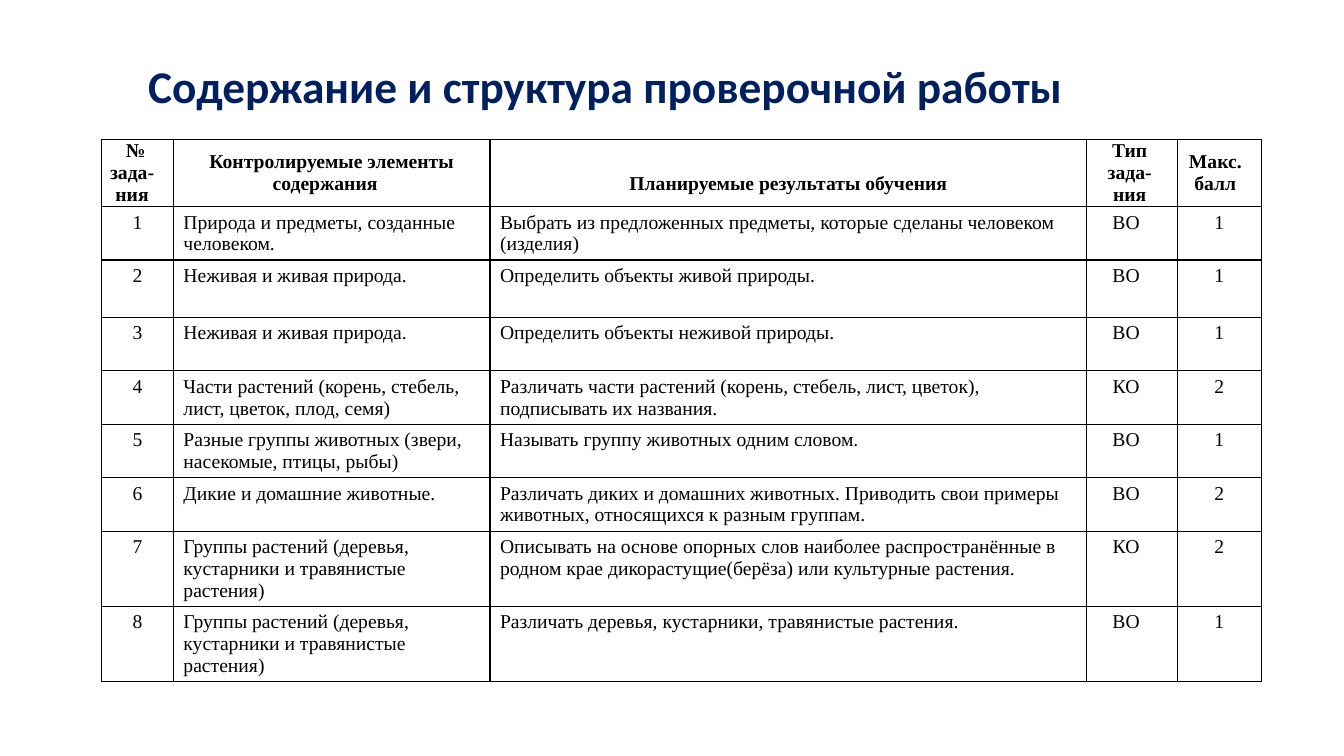
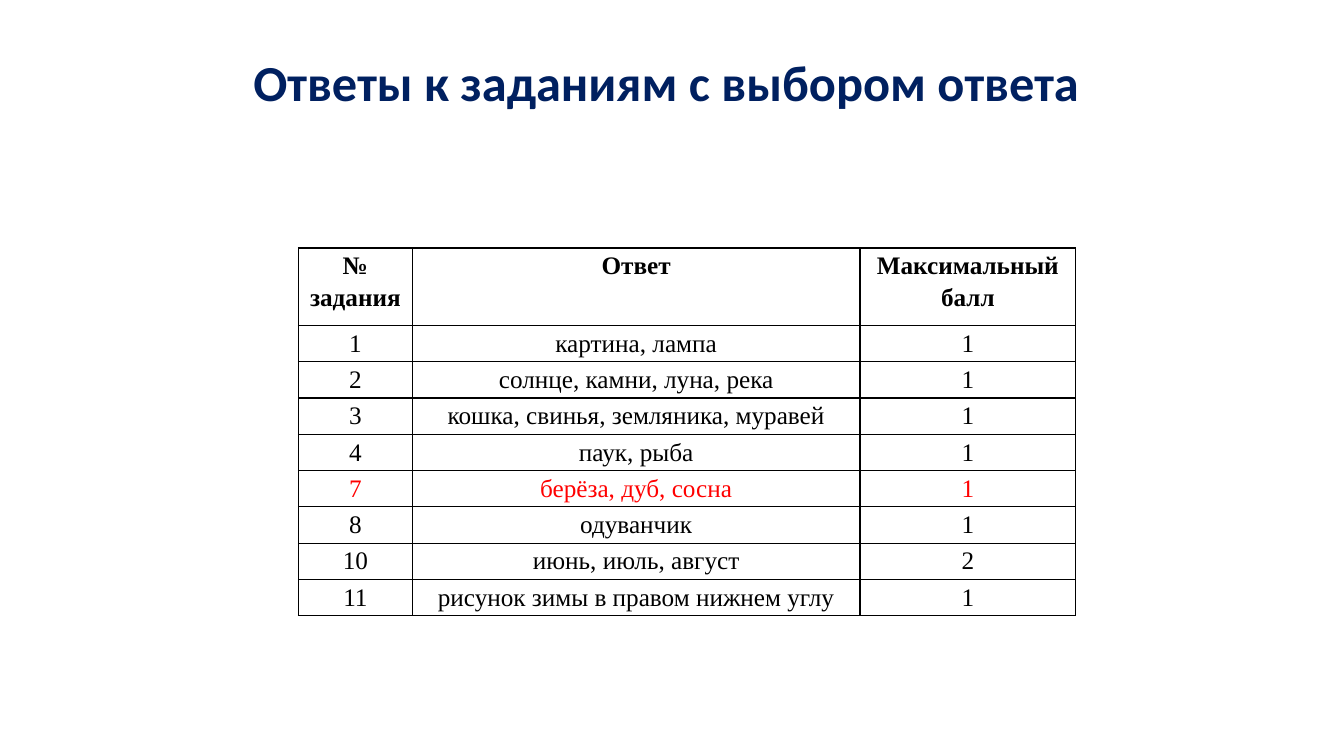
from lxml import etree
from pptx import Presentation
from pptx.dml.color import RGBColor
from pptx.enum import text
from pptx.oxml import ns
from pptx.util import Inches, Pt

NAVY = RGBColor(0x00, 0x20, 0x60)
BLACK = RGBColor(0x00, 0x00, 0x00)
RED = RGBColor(0xFF, 0x00, 0x00)
TITLE_FONT = "Calibri"
TABLE_FONT = "Times New Roman"
TITLE_ONLY = 5
LEFT, CENTER = text.PP_ALIGN.LEFT, text.PP_ALIGN.CENTER
TOP, MIDDLE = text.MSO_ANCHOR.TOP, text.MSO_ANCHOR.MIDDLE

STRUCTURE_HEADER = [
    "№ зада-ния", "Контролируемые элементы содержания",
    "Планируемые результаты обучения", "Тип зада-ния", "Макс. балл",
]
STRUCTURE_ROWS = [
    ("1", "Природа и предметы, созданные человеком.",
     "Выбрать из предложенных предметы, которые сделаны человеком (изделия)", "ВО", "1"),
    ("2", "Неживая и живая природа.", "Определить объекты живой природы.", "ВО", "1"),
    ("3", "Неживая и живая природа.", "Определить объекты неживой природы.", "ВО", "1"),
    ("4", "Части растений (корень, стебель, лист, цветок, плод, семя)",
     "Различать части растений (корень, стебель, лист, цветок), подписывать их названия.",
     "КО", "2"),
    ("5", "Разные группы животных (звери, насекомые, птицы, рыбы)",
     "Называть группу животных одним словом.", "ВО", "1"),
    ("6", "Дикие и домашние животные.",
     "Различать диких и домашних животных. Приводить свои примеры животных, "
     "относящихся к разным группам.", "ВО", "2"),
    ("7", "Группы растений (деревья, кустарники и травянистые растения)",
     "Описывать на основе опорных слов наиболее распространённые в родном крае "
     "дикорастущие(берёза) или культурные растения.", "КО", "2"),
    ("8", "Группы растений (деревья, кустарники и травянистые растения)",
     "Различать деревья, кустарники, травянистые растения.", "ВО", "1"),
]
ANSWER_HEADER = ["№ задания", "Ответ", "Максимальный балл"]
ANSWER_ROWS = [
    ("1", "картина, лампа", "1"),
    ("2", "солнце, камни, луна, река", "1"),
    ("3", "кошка, свинья, земляника, муравей", "1"),
    ("4", "паук, рыба", "1"),
    ("7", "берёза, дуб, сосна", "1"),
    ("8", "одуванчик", "1"),
    ("10", "июнь, июль, август", "2"),
    ("11", "рисунок зимы в правом нижнем углу", "1"),
]
HIGHLIGHTED_TASK = "7"


def add_titled_slide(presentation, title_text, size, left, width, height):
    slide = presentation.slides.add_slide(presentation.slide_layouts[TITLE_ONLY])
    title = slide.shapes.title
    title.left, title.top = Inches(left), Inches(0.4)
    title.width, title.height = Inches(width), Inches(height)
    frame = title.text_frame
    frame.text = title_text
    frame.auto_size = text.MSO_AUTO_SIZE.NONE
    frame.vertical_anchor = MIDDLE
    paragraph = frame.paragraphs[0]
    paragraph.alignment = CENTER
    paragraph.line_spacing = 0.9
    set_font(paragraph, TITLE_FONT, size, NAVY, True)
    return slide


def set_font(paragraph, name, size, color, bold=False):
    font = paragraph.font
    font.name, font.size, font.bold = name, Pt(size), bold
    font.color.rgb = color


def set_borders(cell):
    properties = cell._tc.get_or_add_tcPr()
    for side in ("lnL", "lnR", "lnT", "lnB"):
        line = etree.SubElement(properties, ns.qn(f"a:{side}"), w=str(Pt(1)))
        fill = etree.SubElement(line, ns.qn("a:solidFill"))
        etree.SubElement(fill, ns.qn("a:srgbClr"), val=str(BLACK))


def set_indents(paragraph, left=0, right=0, first=0):
    properties = paragraph._p.get_or_add_pPr()
    for name, value in (("marL", left), ("marR", right), ("indent", first)):
        properties.set(name, str(Inches(value)))


def set_margins(cell, left, top, right, bottom):
    cell.margin_left, cell.margin_top = Inches(left), Inches(top)
    cell.margin_right, cell.margin_bottom = Inches(right), Inches(bottom)


def add_grid(slide, left, top, widths, heights, rows, size):
    """Add a plain bordered table with a bold first row and centred text."""
    frame = slide.shapes.add_table(
        len(rows), len(widths), Inches(left), Inches(top),
        Inches(sum(widths)), Inches(sum(heights)))
    table = frame.table
    table.first_row = table.horz_banding = False
    for column, width in zip(table.columns, widths):
        column.width = Inches(width)
    for row_index, (row, height, values) in enumerate(zip(table.rows, heights, rows)):
        row.height = Inches(height)
        for cell, value in zip(row.cells, values):
            set_borders(cell)
            cell.fill.background()
            cell.vertical_anchor = TOP
            cell.text = value
            paragraph = cell.text_frame.paragraphs[0]
            paragraph.alignment = CENTER
            set_font(paragraph, TABLE_FONT, size, BLACK, row_index == 0)
    return table


def add_structure_slide(presentation):
    slide = add_titled_slide(
        presentation, "Содержание и структура проверочной работы", 32.4, 0.92, 10.17, 0.96)
    heights = [0.67, 0.53, 0.57, 0.53, 0.53, 0.53, 0.53, 0.74, 0.74]
    table = add_grid(slide, 1.01, 1.38, [0.71, 3.14, 5.92, 0.9, 0.83], heights,
                     [STRUCTURE_HEADER, *STRUCTURE_ROWS], 14)
    header_indents = [(0, 0.11, 0.07), (0, 0.13, 0.13), (0, 0, 0), (0.15, 0.2, 0), (0, 0.08, 0)]
    for column, indents in enumerate(header_indents):
        cell = table.cell(0, column)
        set_margins(cell, 0.01, 0.01, 0.01, 0.01)
        cell.vertical_anchor = MIDDLE
        set_indents(cell.text_frame.paragraphs[0], *indents)
    table.cell(0, 2).margin_top = Inches(0.23)
    for row in range(1, len(heights)):
        for column in (1, 2):
            table.cell(row, column).text_frame.paragraphs[0].alignment = LEFT
        set_indents(table.cell(row, 3).text_frame.paragraphs[0], right=0.12)


def add_answers_slide(presentation):
    slide = add_titled_slide(
        presentation, "Ответы к заданиям с выбором ответа", 36, 0.86, 11.5, 0.9)
    heights = [0.77] + [0.36] * len(ANSWER_ROWS)
    table = add_grid(slide, 2.96, 2.46, [1.13, 4.44, 2.14], heights,
                     [ANSWER_HEADER, *ANSWER_ROWS], 18)
    for row in table.rows:
        highlighted = row.cells[0].text == HIGHLIGHTED_TASK
        for cell in row.cells:
            set_margins(cell, 0.07, 0, 0.07, 0)
            paragraph = cell.text_frame.paragraphs[0]
            paragraph.line_spacing = 1.15
            if highlighted:
                paragraph.font.color.rgb = RED


def main():
    presentation = Presentation()
    presentation.slide_width, presentation.slide_height = Inches(13.33), Inches(7.5)
    add_structure_slide(presentation)
    add_answers_slide(presentation)
    presentation.save("out.pptx")


if __name__ == "__main__":
    main()
